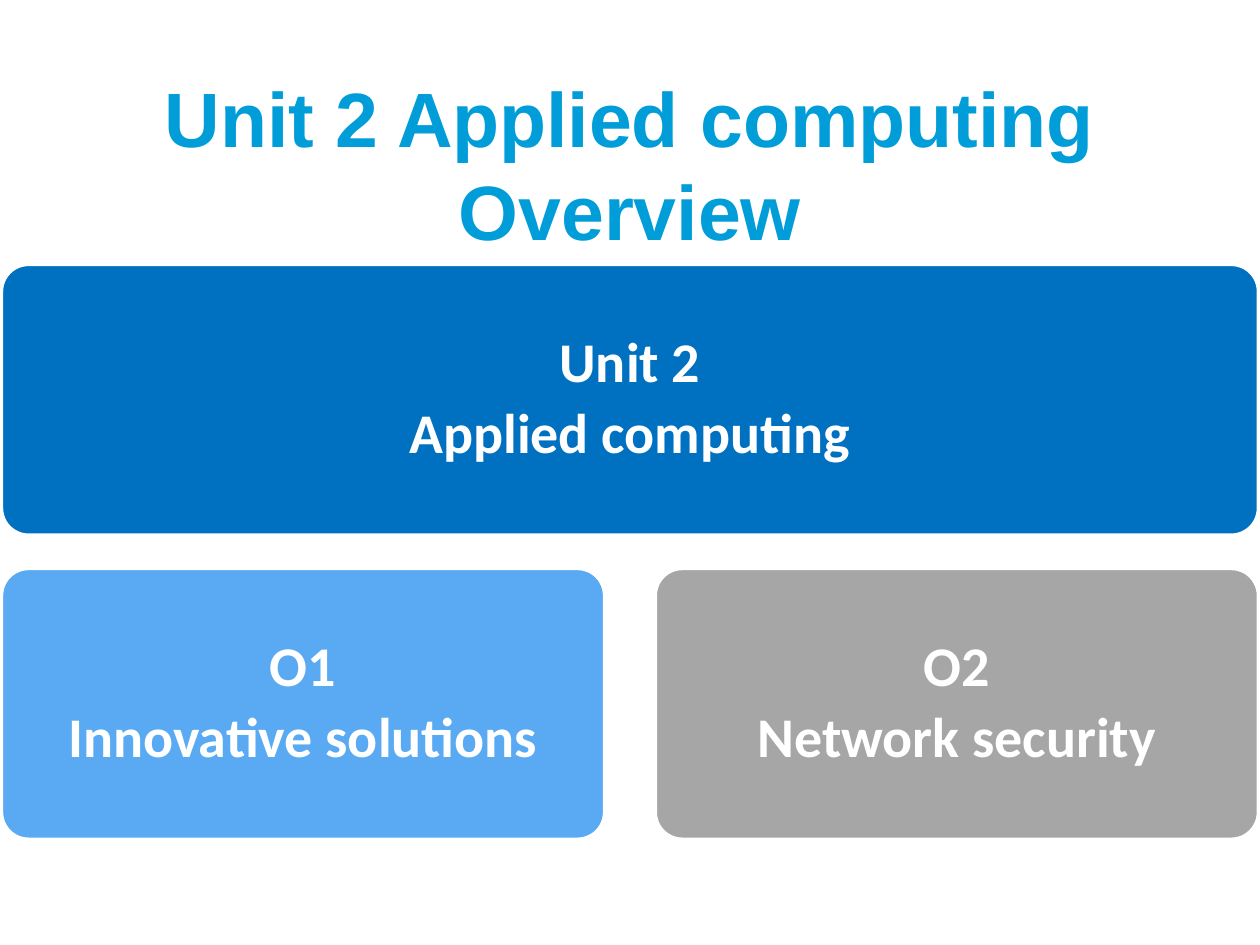
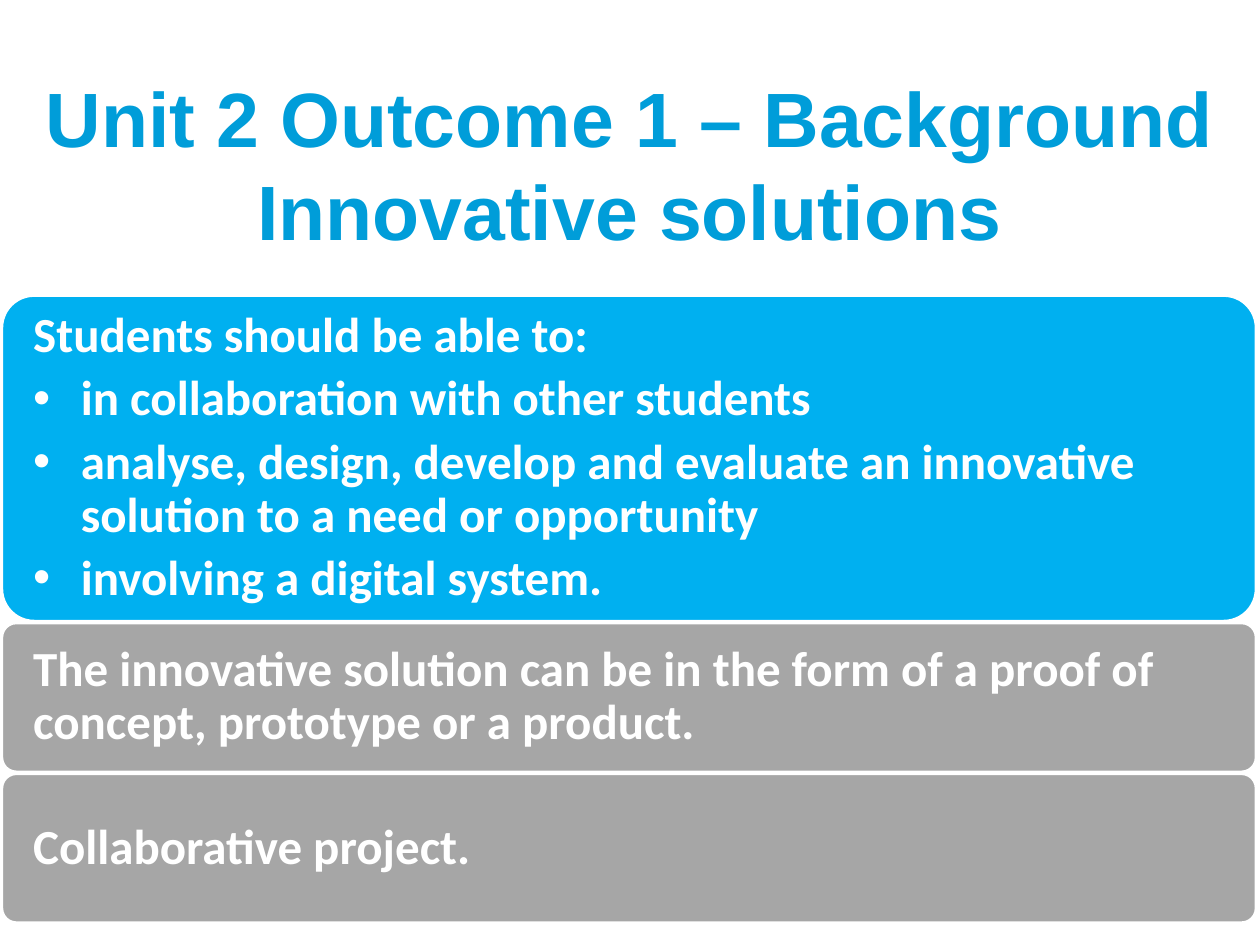
from pptx import Presentation
from pptx.dml.color import RGBColor
from pptx.enum.shapes import MSO_SHAPE as Shape
from pptx.enum.text import MSO_ANCHOR as Anchor, MSO_AUTO_SIZE as AutoSize, PP_ALIGN as Align
from pptx.oxml.ns import qn
from pptx.util import Cm, Pt
from lxml.etree import SubElement

# Content
OVERVIEW_TITLE = "Unit 2 Applied computing\vOverview"
UNIT = ["Unit 2", "Applied computing"]
OUTCOMES = [
    (["O1", "Innovative solutions"], "59AAF2"),
    (["O2", "Network security"], "A6A6A6"),
]
BACKGROUND_TITLE = "Unit 2 Outcome 1 – Background\vInnovative solutions"
# Each panel: lines of text, fill, height in cm; a leading "• " marks a bullet
PANELS = [
    (["Students should be able to:",
      "• in collaboration with other students",
      "• analyse, design, develop and evaluate an innovative solution to a need or opportunity",
      "• involving a digital system."], "00B0F0", 6.58),
    (["The innovative solution can be in the form of a proof of concept, "
      "prototype or a product."], "A6A6A6", 3.02),
    (["Collaborative project."], "A6A6A6", 3.02),
]

# Shared style, lengths in cm
WHITE, TITLE_BLUE, UNIT_BLUE = "FFFFFF", "009DD9", "0070C0"
SLIDE_WIDTH, SLIDE_HEIGHT = 25.4, 19.05
EDGE = 0.03
CORNER = 0.1
CORNER_INSET = 0.29 * CORNER  # share of the height that rounding takes from the text
BULLET_INDENT = 0.96


def color(hex_string):
    return RGBColor.from_string(hex_string)


def write(paragraph, text, *, size, font="Calibri", fill=WHITE, align=Align.LEFT,
          line_spacing=0.9, space_after=6):
    if text.startswith("• "):
        text = text[2:]
        properties = paragraph._p.get_or_add_pPr()
        properties.set("marL", str(Cm(BULLET_INDENT)))
        properties.set("indent", str(-Cm(BULLET_INDENT)))
        SubElement(properties, qn("a:buFont"), typeface="Arial")
        SubElement(properties, qn("a:buChar"), char="•")
    paragraph.text = text
    paragraph.alignment = align
    paragraph.line_spacing = line_spacing
    paragraph.space_after = Pt(space_after)
    for run in paragraph.runs:
        run.font.name, run.font.size, run.font.bold = font, Pt(size), True
        run.font.color.rgb = color(fill)


def add_titled_slide(presentation, text, side_margin):
    slide = presentation.slides.add_slide(presentation.slide_layouts[5])
    title = slide.shapes.title
    title.left, title.top = Cm(side_margin), Cm(1.7)
    title.width, title.height = Cm(SLIDE_WIDTH - 2 * side_margin), Cm(3.18)
    frame = title.text_frame
    frame.auto_size, frame.vertical_anchor = AutoSize.NONE, Anchor.MIDDLE
    write(frame.paragraphs[0], text, size=44, font="Arial", fill=TITLE_BLUE,
          align=Align.CENTER, line_spacing=1.0, space_after=0)
    return slide


def add_box(slide, lines, fill, left, top, width, height, *, side_inset, **text_format):
    shape = slide.shapes.add_shape(Shape.ROUNDED_RECTANGLE,
                                   Cm(left), Cm(top), Cm(width), Cm(height))
    shape.adjustments[0] = CORNER
    shape.shadow.inherit = False
    shape.fill.solid()
    shape.fill.fore_color.rgb = color(fill)
    shape.line.color.rgb = color(WHITE)
    shape.line.width = Pt(2)
    frame = shape.text_frame
    frame.word_wrap, frame.vertical_anchor = True, Anchor.MIDDLE
    frame.margin_left = frame.margin_right = Cm(side_inset)
    frame.margin_top = frame.margin_bottom = Cm(0.25)
    for index, line in enumerate(lines):
        paragraph = frame.add_paragraph() if index else frame.paragraphs[0]
        write(paragraph, line, **text_format)


def build_overview(presentation):
    slide = add_titled_slide(presentation, OVERVIEW_TITLE, 1.9)
    top, height, row_gap, column_gap = 5.33, 5.46, 0.67, 1.02
    full_width = SLIDE_WIDTH - 2 * EDGE
    box_format = dict(side_inset=0.33, size=32, align=Align.CENTER)
    add_box(slide, UNIT, UNIT_BLUE, EDGE, top, full_width, height, **box_format)

    # Outcomes share the row below the unit
    width = (full_width - column_gap * (len(OUTCOMES) - 1)) / len(OUTCOMES)
    for column, (lines, fill) in enumerate(OUTCOMES):
        add_box(slide, lines, fill, EDGE + column * (width + column_gap),
                top + height + row_gap, width, height, **box_format)


def build_background(presentation):
    slide = add_titled_slide(presentation, BACKGROUND_TITLE, 0)
    top, text_left = 5.95, 0.64
    for lines, fill, height in PANELS:
        add_box(slide, lines, fill, EDGE, top, SLIDE_WIDTH - 0.1, height,
                side_inset=text_left - CORNER_INSET * height, size=28)
        top += height + 0.02


def main():
    presentation = Presentation()
    presentation.slide_width, presentation.slide_height = Cm(SLIDE_WIDTH), Cm(SLIDE_HEIGHT)
    build_overview(presentation)
    build_background(presentation)
    presentation.save("out.pptx")


if __name__ == "__main__":
    main()
